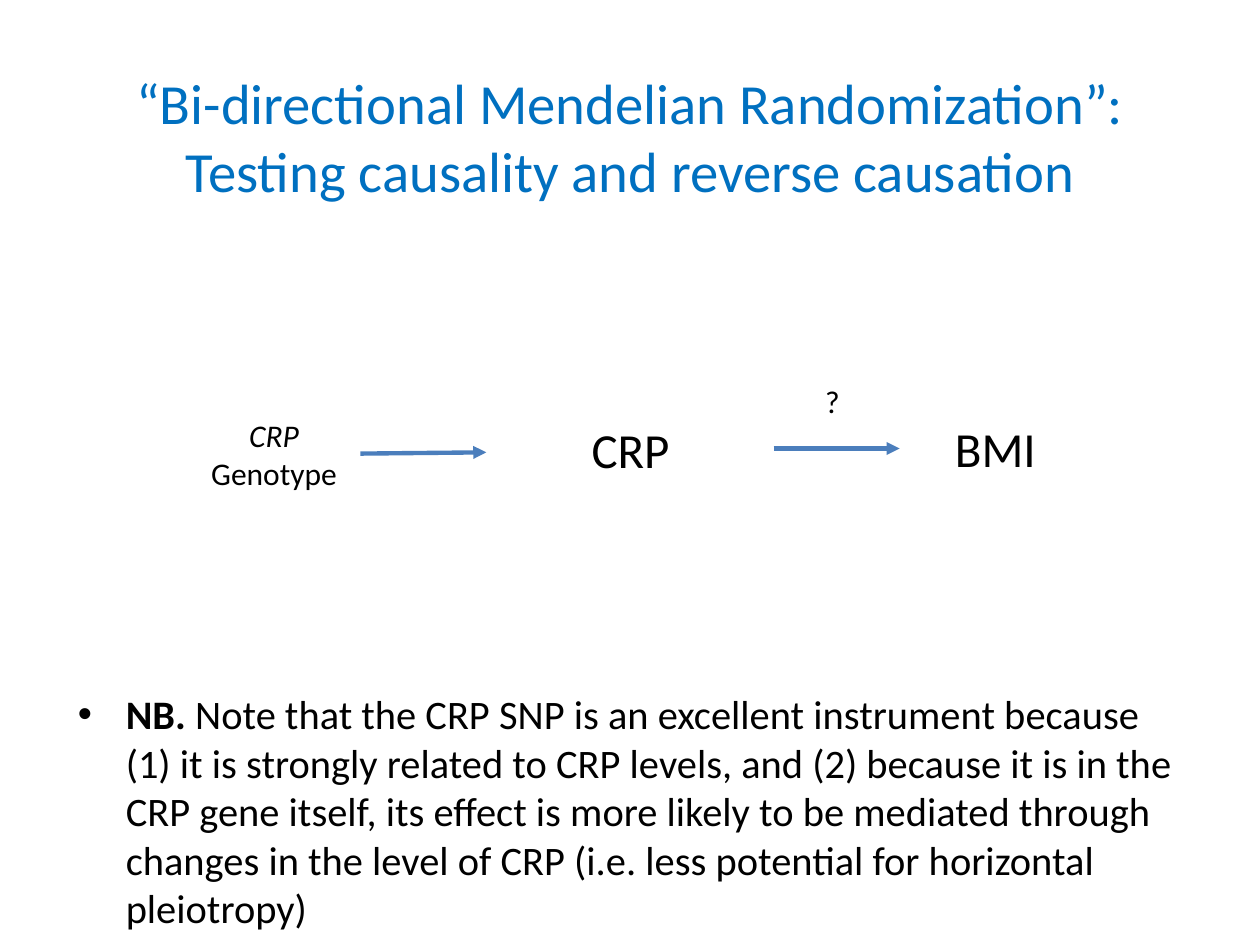
from dataclasses import dataclass

from lxml.etree import SubElement
from pptx import Presentation
from pptx.dml.color import RGBColor
from pptx.enum.shapes import MSO_CONNECTOR
from pptx.enum.text import MSO_ANCHOR, MSO_AUTO_SIZE, PP_ALIGN
from pptx.oxml.ns import qn
from pptx.util import Inches, Pt


@dataclass(frozen=True)
class Theme:
    """Colours, typeface and type sizes of the deck."""

    font: str = "Calibri"
    title_color: RGBColor = RGBColor(0x00, 0x70, 0xC0)
    text_color: RGBColor = RGBColor(0x00, 0x00, 0x00)
    arrow_color: RGBColor = RGBColor(0x4B, 0x7E, 0xBC)
    title_size: float = 32.4
    trait_size: float = 28
    note_size: float = 23.1
    label_size: float = 18
    arrow_width: float = 2.5


THEME = Theme()


def add_span(para, text, size, color=THEME.text_color, bold=False, italic=False):
    """Append formatted text to a paragraph."""
    span = para.add_run()
    span.text = text
    span.font.name = THEME.font
    span.font.size = Pt(size)
    span.font.color.rgb = color
    span.font.bold = bold
    span.font.italic = italic


def add_frame(page, left, top, width, height, wrap=True, grow=False,
              anchor=MSO_ANCHOR.TOP):
    """Add an empty text box, measured in inches, and return its text frame."""
    box = page.shapes.add_textbox(*map(Inches, (left, top, width, height)))
    frame = box.text_frame
    frame.word_wrap = wrap
    frame.auto_size = MSO_AUTO_SIZE.SHAPE_TO_FIT_TEXT if grow else MSO_AUTO_SIZE.NONE
    frame.vertical_anchor = anchor
    return frame


def add_label(page, left, top, width, height, text, size=THEME.label_size,
              wrap=True, align=PP_ALIGN.CENTER):
    """Add a one-line diagram label."""
    frame = add_frame(page, left, top, width, height, wrap=wrap, grow=True)
    para = frame.paragraphs[0]
    para.alignment = align
    add_span(para, text, size)


def add_arrow(page, start_x, start_y, end_x, end_y):
    """Draw an arrow between two points given in inches."""
    arrow = page.shapes.add_connector(
        MSO_CONNECTOR.STRAIGHT, *map(Inches, (start_x, start_y, end_x, end_y)))
    arrow.line.color.rgb = THEME.arrow_color
    arrow.line.width = Pt(THEME.arrow_width)
    SubElement(arrow.line._get_or_add_ln(), qn("a:tailEnd"), type="triangle")
    SubElement(arrow._element.spPr, qn("a:effectLst"))


def add_title(page, left, top, width, height):
    """Place the two-line title."""
    frame = add_frame(page, left, top, width, height, anchor=MSO_ANCHOR.MIDDLE)
    para = frame.paragraphs[0]
    para.alignment = PP_ALIGN.CENTER
    add_span(para, "“Bi-directional Mendelian Randomization”:",
             THEME.title_size, THEME.title_color)
    para.add_line_break()
    add_span(para, "Testing causality and reverse causation",
             THEME.title_size, THEME.title_color)


def add_causal_diagram(page, left, top):
    """Place the chain from genotype through CRP to BMI."""
    genotype = add_frame(page, left, top + 0.27, 1.21, 0.71, wrap=False, grow=True)
    for para, text, italic in (
        (genotype.paragraphs[0], "CRP", True),
        (genotype.add_paragraph(), "Genotype", False),
    ):
        para.alignment = PP_ALIGN.CENTER
        add_span(para, text, THEME.label_size, italic=italic)
    add_label(page, left + 2.45, top + 0.3, 1.97, 0.57, "CRP", THEME.trait_size)
    add_label(page, left + 5.7, top + 0.29, 1.26, 0.57, "BMI", THEME.trait_size)
    add_label(page, left + 4.88, top, 0.32, 0.4, "?", wrap=False, align=PP_ALIGN.LEFT)
    add_arrow(page, left + 1.29, top + 0.62, left + 2.29, top + 0.61)
    add_arrow(page, left + 4.57, top + 0.58, left + 5.57, top + 0.58)


def add_note(page, left, top, width, height):
    """Place the bulleted note on the instrument."""
    para = add_frame(page, left, top, width, height).paragraphs[0]
    para.space_before = Pt(THEME.note_size * 0.2)
    properties = para._p.get_or_add_pPr()
    properties.set("marL", str(Inches(0.38)))
    properties.set("indent", str(Inches(-0.38)))
    SubElement(properties, qn("a:buFont"), typeface="Arial")
    SubElement(properties, qn("a:buChar"), char="•")
    add_span(para, "NB. ", THEME.note_size, bold=True)
    add_span(
        para,
        "Note that the CRP SNP is an excellent instrument because (1) it is "
        "strongly related to CRP levels, and (2) because it is in the CRP gene "
        "itself, its effect is more likely to be mediated through changes in the "
        "level of CRP (i.e. less potential for horizontal pleiotropy)",
        THEME.note_size,
    )


def main():
    """Build the deck and save it."""
    deck = Presentation()
    deck.slide_width, deck.slide_height = Inches(10), Inches(7.5)
    page = deck.slides.add_slide(deck.slide_layouts[6])
    add_title(page, 0.5, 0.45, 9, 1.25)
    add_causal_diagram(page, 1.57, 2.98)
    add_note(page, 0.52, 5.42, 9, 1.81)
    deck.save("out.pptx")


if __name__ == "__main__":
    main()
